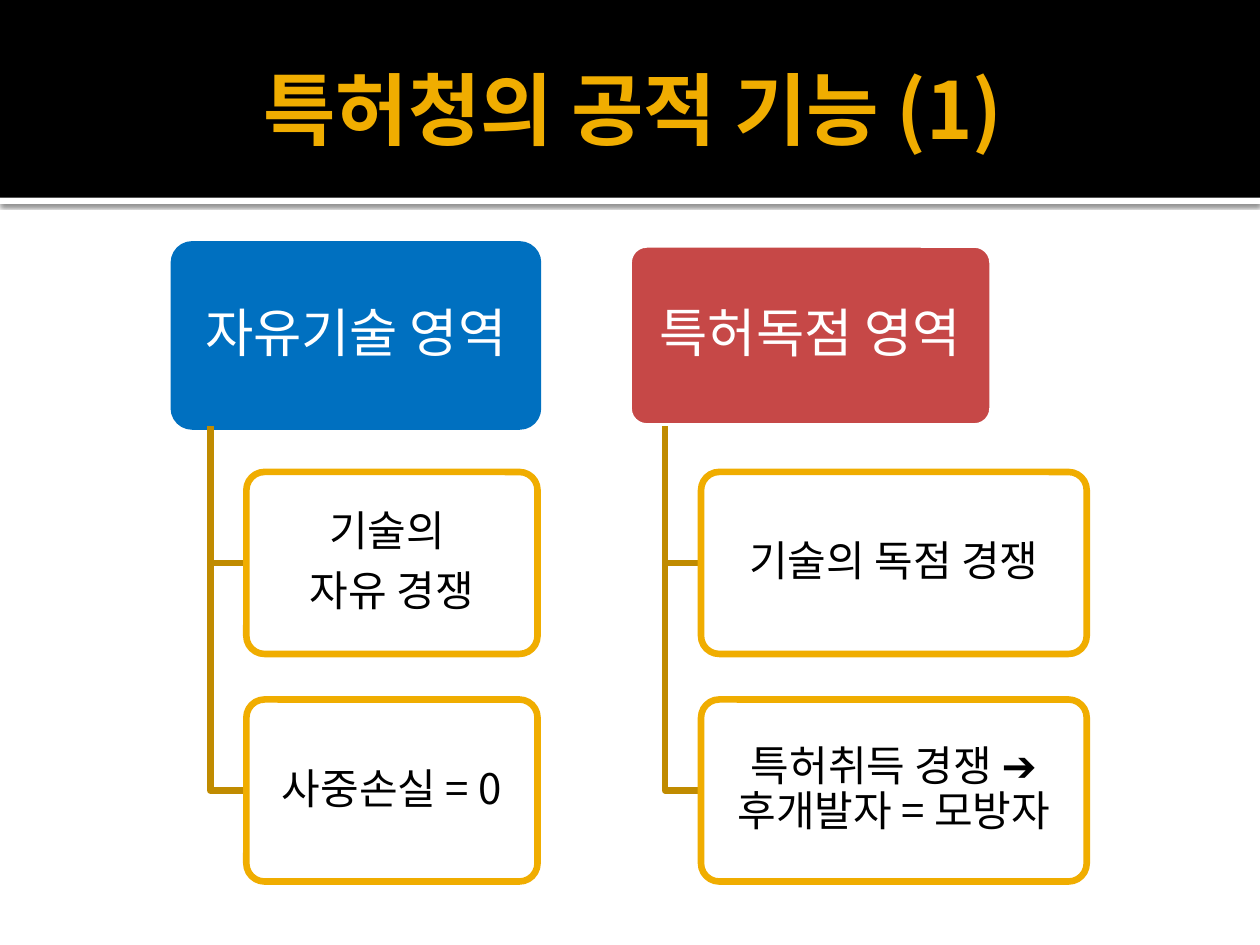
from lxml.etree import SubElement
from pptx import Presentation
from pptx.dml.color import RGBColor
from pptx.enum.shapes import MSO_SHAPE
from pptx.enum.text import MSO_ANCHOR, MSO_AUTO_SIZE, PP_ALIGN
from pptx.oxml.ns import qn
from pptx.util import Pt

FONT = "Noto Sans CJK KR"
BLACK = RGBColor(0x00, 0x00, 0x00)
WHITE = RGBColor(0xFF, 0xFF, 0xFF)
GOLD = RGBColor(0xF0, 0xAD, 0x00)
DARK_GOLD = RGBColor(0xC0, 0x8B, 0x00)
BLUE = RGBColor(0x00, 0x70, 0xC0)
RED = RGBColor(0xC6, 0x48, 0x47)

TOP, BOX_H, PITCH = 139.7, 104, 130
HEAD_W, TRUNK_DX, CHILD_DX = 208, 20.8, 41.4
COLUMNS = [
    (99.4, 166.4, BLUE, BLUE, "자유기술 영역",
     [["기술의 ", "자유 경쟁"], ["사중손실 = 0"]]),
    (359.2, 220.4, RED, WHITE, "특허독점 영역",
     [["기술의 독점 경쟁"], ["특허취득 경쟁 ➔ 후개발자 = 모방자"]]),
]


def set_text(sp, lines, size, color, inset, bold=False):
    tf = sp.text_frame
    tf.word_wrap = True
    tf.auto_size = MSO_AUTO_SIZE.NONE
    tf.vertical_anchor = MSO_ANCHOR.MIDDLE
    tf.margin_left = tf.margin_right = Pt(inset)
    tf.margin_top = tf.margin_bottom = Pt(3)
    tf.text = "\n".join(lines)
    for p in tf.paragraphs:
        p.alignment = PP_ALIGN.CENTER
        p.font.size = Pt(size)
        p.font.bold = bold
        p.font.color.rgb = color
        p.font.name = FONT
        SubElement(p.font._element.find(qn("a:defRPr")) if p.font._element.tag == qn("a:pPr")
                   else p.font._element, qn("a:ea"), typeface=FONT) if hasattr(p.font, "_element") \
            else SubElement(p.font._rPr, qn("a:ea"), typeface=FONT)


def add_box(x, y, w, fill, line, lines, size, color, inset):
    sp = s.shapes.add_shape(MSO_SHAPE.ROUNDED_RECTANGLE, Pt(x), Pt(y), Pt(w), Pt(BOX_H))
    sp.adjustments[0] = 0.1
    sp.shadow.inherit = False
    sp.fill.solid()
    sp.fill.fore_color.rgb = fill
    sp.line.color.rgb = line
    sp.line.width = Pt(3.78)
    set_text(sp, lines, size, color, inset)
    for p in sp.text_frame.paragraphs:
        p.line_spacing = 0.9
        p.space_after = Pt(size * 0.35)
    return sp


prs = Presentation()
prs.slide_width, prs.slide_height = Pt(720), Pt(540)
s = prs.slides.add_slide(prs.slide_layouts[5])

for y, h, color in [(113, 3.6, WHITE), (0, 113, BLACK)]:
    sp = s.shapes.add_shape(MSO_SHAPE.RECTANGLE, 0, Pt(y), Pt(720), Pt(h))
    sp.shadow.inherit = False
    sp.fill.solid()
    sp.fill.fore_color.rgb = color
    sp.line.fill.background()
    if color == WHITE:
        effects = sp._element.spPr.find(qn("a:effectLst"))
        shadow = SubElement(effects, qn("a:outerShdw"), blurRad=str(Pt(2.5)),
                            dist=str(Pt(0.8)), dir="5400000", algn="t", rotWithShape="0")
        clr = SubElement(shadow, qn("a:srgbClr"), val=str(BLACK))
        SubElement(clr, qn("a:alpha"), val="60000")

title = s.shapes.title
s.shapes._spTree.append(title._element)
title.left, title.top, title.width, title.height = Pt(36), Pt(12.2), Pt(648), Pt(98.6)
set_text(title, ["특허청의 공적 기능 (1)"], 45, GOLD, 3.6, bold=True)
title.text_frame.margin_left = Pt(7.2)

for x, child_w, fill, line, heading, children in COLUMNS:
    add_box(x, TOP, HEAD_W, fill, line, [heading], 30, WHITE, 4.5)
    trunk_x, child_x = x + TRUNK_DX, x + CHILD_DX
    for i, lines in enumerate(children, 1):
        y = TOP + i * PITCH
        mid = y + BOX_H / 2
        fb = s.shapes.build_freeform(Pt(trunk_x), Pt(TOP + BOX_H))
        fb.add_line_segments([(Pt(trunk_x), Pt(mid)), (Pt(child_x), Pt(mid))], close=False)
        elbow = fb.convert_to_shape()
        elbow.shadow.inherit = False
        elbow.fill.background()
        elbow.line.color.rgb = DARK_GOLD
        elbow.line.width = Pt(3.78)
        sp = add_box(child_x, y, child_w, WHITE, GOLD, lines, 24, BLACK, 3.6)
        clr = sp._element.spPr.find(qn("a:solidFill")).find(qn("a:srgbClr"))
        SubElement(clr, qn("a:alpha"), val="90000")

prs.save("out.pptx")
